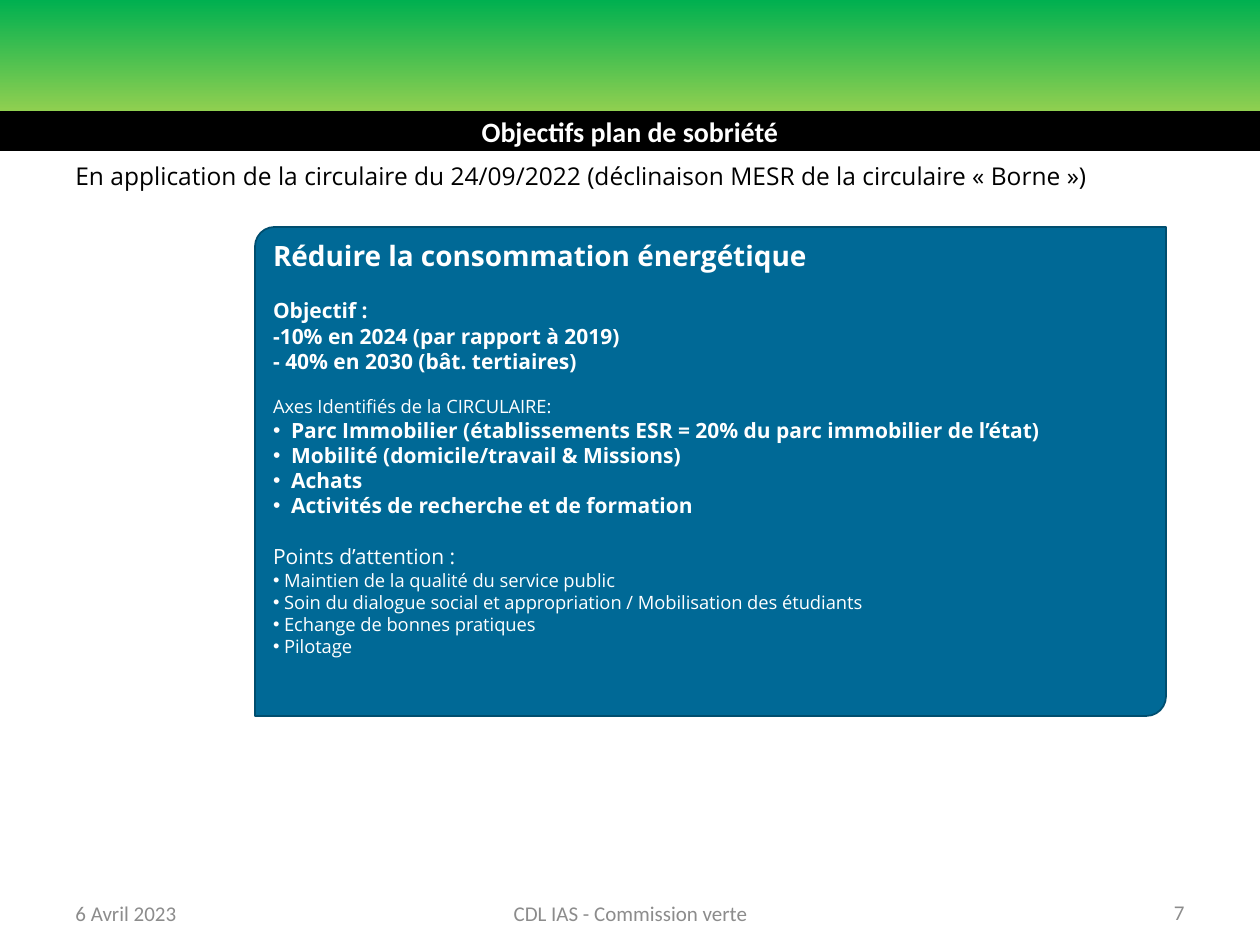
from dataclasses import dataclass

from lxml import etree
from pptx import Presentation
from pptx.dml.color import RGBColor
from pptx.enum.shapes import MSO_SHAPE
from pptx.enum.text import MSO_ANCHOR, MSO_AUTO_SIZE, PP_ALIGN
from pptx.oxml.ns import qn
from pptx.util import Emu, Pt

RECT, CARD = MSO_SHAPE.RECTANGLE, MSO_SHAPE.ROUND_2_DIAG_RECTANGLE
LEFT, MID, RIGHT = PP_ALIGN.LEFT, PP_ALIGN.CENTER, PP_ALIGN.RIGHT
TOP, CENTRE = MSO_ANCHOR.TOP, MSO_ANCHOR.MIDDLE
FIXED = MSO_AUTO_SIZE.NONE
SCALE = 914400 / 126


@dataclass(frozen=True)
class Theme:
    lime: str = "92D050"
    green: str = "00B050"
    blue: str = "006996"
    edge: str = "004E6F"
    black: str = "000000"
    white: str = "FFFFFF"
    grey: str = "8C8C8C"
    sans: str = "Open Sans"
    plain: str = "Calibri"
    head: float = 16
    lead: float = 14
    body: float = 12
    small: float = 10.5


@dataclass(frozen=True)
class Box:
    x: int
    y: int
    w: int
    h: int

    def emu(self) -> tuple[Emu, ...]:
        return tuple(px(n) for n in (self.x, self.y, self.w, self.h))


@dataclass(frozen=True)
class Line:
    text: str
    size: float
    bold: bool = False
    gap: float = 0
    hang: int = 0


@dataclass(frozen=True)
class Foot:
    text: str
    box: Box
    align: PP_ALIGN


THEME = Theme()

LINES = [
    Line("Réduire la consommation énergétique", THEME.head, True),
    Line("Objectif :", THEME.body, True, gap=14.5),
    Line("-10% en 2024 (par rapport à 2019)", THEME.body, True),
    Line("- 40% en 2030 (bât. tertiaires)", THEME.body, True),
    Line("Axes Identifiés de la CIRCULAIRE:", THEME.small, gap=12.5),
    *(Line(text, THEME.body, True, hang=18) for text in (
        "Parc Immobilier (établissements ESR = 20% du parc immobilier de l’état)",
        "Mobilité (domicile/travail & Missions)",
        "Achats",
        "Activités de recherche et de formation",
    )),
    Line("Points d’attention :", THEME.body, gap=14.5),
    *(Line(text, THEME.small, hang=11) for text in (
        "Maintien de la qualité du service public",
        "Soin du dialogue social et appropriation / Mobilisation des étudiants",
        "Echange de bonnes pratiques",
        "Pilotage",
    )),
]

FEET = [
    Foot("6 Avril 2023", Box(63, 888, 294, 50), LEFT),
    Foot("CDL IAS - Commission verte", Box(431, 888, 399, 50), MID),
    Foot("7", Box(903, 887, 294, 50), RIGHT),
]


def px(n: int) -> Emu:
    return Emu(round(n * SCALE))


def rgb(code: str) -> RGBColor:
    return RGBColor.from_string(code)


def write(para, text: str, *, size: float, color: str, font: str = THEME.sans,
          bold: bool = False, align: PP_ALIGN = LEFT, gap: float = 0,
          hang: int = 0) -> None:
    """Fill one paragraph; hang is the bullet indent in px."""
    if hang:
        props = para._p.get_or_add_pPr()
        props.set("marL", str(px(hang)))
        props.set("indent", str(-px(hang)))
        etree.SubElement(props, qn("a:buFont")).set("typeface", "Arial")
        etree.SubElement(props, qn("a:buChar")).set("char", "•")
    para.alignment = align
    if gap:
        para.space_before = Pt(gap)
    run = para.add_run()
    run.text = text
    run.font.name, run.font.size, run.font.bold = font, Pt(size), bold
    run.font.color.rgb = rgb(color)


def frame(shape, anchor: MSO_ANCHOR):
    """Set up a shape's text frame and return it."""
    body = shape.text_frame
    body.word_wrap, body.auto_size = True, FIXED
    body.vertical_anchor = anchor
    return body


def add_text(slide, box: Box, text: str, anchor: MSO_ANCHOR, **style) -> None:
    body = frame(slide.shapes.add_textbox(*box.emu()), anchor)
    write(body.paragraphs[0], text, **style)


def add_band(slide, box: Box) -> None:
    band = slide.shapes.add_shape(RECT, *box.emu())
    band.shadow.inherit = False
    band.line.fill.background()
    band.fill.gradient()
    band.fill.gradient_angle = 90
    for stop, code in zip(band.fill.gradient_stops, (THEME.lime, THEME.green)):
        stop.color.rgb = rgb(code)


def set_title(slide, box: Box, text: str) -> None:
    title = slide.shapes.title
    title.left, title.top, title.width, title.height = box.emu()
    title.fill.solid()
    title.fill.fore_color.rgb = rgb(THEME.black)
    body = frame(title, CENTRE)
    body.margin_top = body.margin_bottom = 0
    write(body.paragraphs[0], text, size=THEME.head, color=THEME.white,
          font=THEME.plain, bold=True, align=MID)


def add_card(slide, box: Box, lines: list[Line]) -> None:
    card = slide.shapes.add_shape(CARD, *box.emu())
    card.shadow.inherit = False
    card.adjustments[0], card.adjustments[1] = 0.04, 0
    card.fill.solid()
    card.fill.fore_color.rgb = rgb(THEME.blue)
    card.line.color.rgb, card.line.width = rgb(THEME.edge), Pt(1)
    body = frame(card, TOP)
    for i, line in enumerate(lines):
        para = body.add_paragraph() if i else body.paragraphs[0]
        write(para, line.text, size=line.size, color=THEME.white,
              bold=line.bold, gap=line.gap, hang=line.hang)


def main() -> None:
    deck = Presentation()
    deck.slide_width, deck.slide_height = px(1260), px(945)
    slide = deck.slides.add_slide(deck.slide_layouts[5])

    # Header: green band behind the black title bar
    add_band(slide, Box(0, 0, 1260, 113))
    tree = slide.shapes._spTree
    tree.append(slide.shapes.title._element)
    set_title(slide, Box(0, 111, 1260, 40), "Objectifs plan de sobriété")

    # Lead sentence and goals card
    add_card(slide, Box(255, 227, 911, 489), LINES)
    add_text(slide, Box(63, 155, 1197, 43),
             "En application de la circulaire du 24/09/2022 "
             "(déclinaison MESR de la circulaire « Borne »)",
             TOP, size=THEME.lead, color=THEME.black)

    # Footer
    for foot in FEET:
        add_text(slide, foot.box, foot.text, CENTRE, size=THEME.body,
                 color=THEME.grey, font=THEME.plain, align=foot.align)

    deck.save("out.pptx")


if __name__ == "__main__":
    main()
